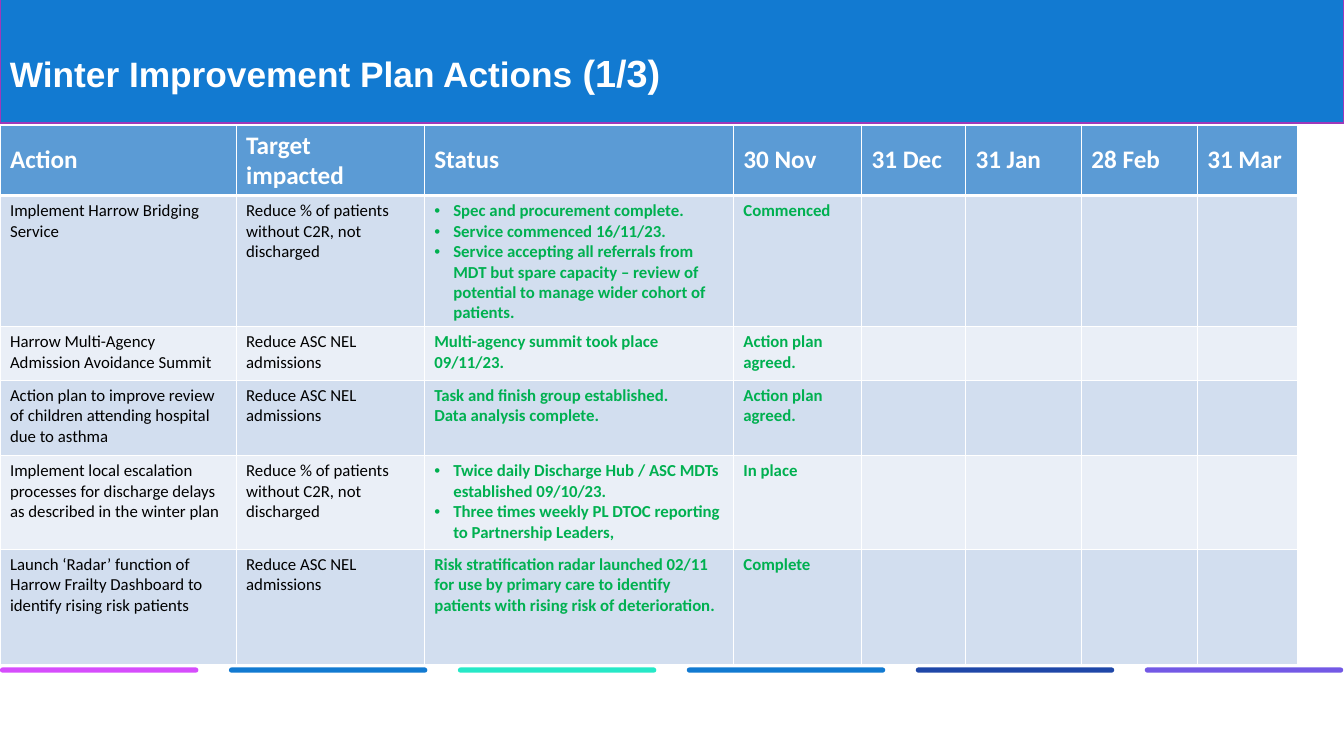
from dataclasses import dataclass

from lxml import etree
from pptx import Presentation
from pptx.dml.color import RGBColor
from pptx.enum.shapes import MSO_SHAPE
from pptx.enum.text import MSO_ANCHOR
from pptx.oxml.ns import qn
from pptx.slide import Slide
from pptx.table import _Cell
from pptx.util import Cm, Pt

RECTANGLE = MSO_SHAPE.RECTANGLE
ROUNDED_RECTANGLE = MSO_SHAPE.ROUNDED_RECTANGLE
MIDDLE = MSO_ANCHOR.MIDDLE


@dataclass(frozen=True)
class Theme:
    title_font: str = "Arial"
    table_font: str = "Calibri"
    title_size: float = 25.2
    page_size: float = 27
    header_size: float = 18
    body_size: float = 12
    white: str = "FFFFFF"
    black: str = "000000"
    progress: str = "00B050"
    band: str = "127AD1"
    band_line: str = "9E39BA"
    header_fill: str = "5B9BD5"
    row_fills: tuple[str, str] = ("D2DEEF", "EAEFF7")
    bars: tuple[str, ...] = ("D64DFC", "127AD1", "26E8C7", "127AD1", "1F47A8", "7359E5")


@dataclass(frozen=True)
class Action:
    name: str
    target: str
    status: str
    november: str
    height: float
    bulleted: bool = False


THEME = Theme()
HEADERS = ("Action", "Target impacted", "Status", "30 Nov", "31 Dec", "31 Jan", "28 Feb", "31 Mar")
COLUMN_WIDTHS = (5.95, 4.74, 7.79, 3.23, 2.62, 2.92, 2.92, 2.54)
HEADER_HEIGHT = 1.75
STATUS_COLUMN = 2
DISCHARGE = "Reduce % of patients without C2R, not discharged"
ADMISSIONS = "Reduce ASC NEL admissions"
ACTIONS = (
    Action("Implement Harrow Bridging Service", DISCHARGE,
           "Spec and procurement complete.\nService commenced 16/11/23.\n"
           "Service accepting all referrals from MDT but spare capacity – review of "
           "potential to manage wider cohort of patients.",
           "Commenced", 3.28, True),
    Action("Harrow Multi-Agency Admission Avoidance Summit", ADMISSIONS,
           "Multi-agency summit took place 09/11/23.", "Action plan agreed.", 1.35),
    Action("Action plan to improve review of children attending hospital due to asthma", ADMISSIONS,
           "Task and finish group established.\nData analysis complete.",
           "Action plan agreed.", 1.9),
    Action("Implement local escalation processes for discharge delays as described in the winter plan",
           DISCHARGE,
           "Twice daily Discharge Hub / ASC MDTs established 09/10/23.\n"
           "Three times weekly PL DTOC reporting to Partnership Leaders,",
           "In place", 2.36, True),
    Action("Launch ‘Radar’ function of Harrow Frailty Dashboard to identify rising risk patients",
           ADMISSIONS,
           "Risk stratification radar launched 02/11 for use by primary care to identify "
           "patients with rising risk of deterioration.",
           "Complete", 2.9),
)


def color(value: str) -> RGBColor:
    return RGBColor.from_string(value)


def add_band(slide: Slide) -> None:
    band = slide.shapes.add_shape(RECTANGLE, Cm(0), Cm(-0.08), Cm(33.87), Cm(3.18))
    band.shadow.inherit = False
    band.fill.solid()
    band.fill.fore_color.rgb = color(THEME.band)
    band.line.color.rgb = color(THEME.band_line)
    band.line.width = Pt(1)


def add_footer_bars(slide: Slide) -> None:
    for index, fill in enumerate(THEME.bars):
        bar = slide.shapes.add_shape(ROUNDED_RECTANGLE, Cm(5.77 * index), Cm(16.82), Cm(5), Cm(0.13))
        bar.shadow.inherit = False
        bar.adjustments[0] = 0.5
        bar.fill.solid()
        bar.fill.fore_color.rgb = color(fill)
        bar.line.fill.background()


def add_title(slide: Slide) -> None:
    title = slide.shapes.add_textbox(Cm(0), Cm(0.05), Cm(29.21), Cm(3.68))
    title.text_frame.word_wrap = True
    title.text_frame.vertical_anchor = MIDDLE
    paragraph = title.text_frame.paragraphs[0]
    paragraph.line_spacing = 0.9
    for text, size in (("Winter Improvement Plan Actions ", THEME.title_size),
                       ("(1/3)", THEME.page_size)):
        run = paragraph.add_run()
        run.text = text
        run.font.name = THEME.title_font
        run.font.size = Pt(size)
        run.font.bold = True
        run.font.color.rgb = color(THEME.white)


def set_borders(cell: _Cell, row: int) -> None:
    """Draw white borders, with a heavy rule between the header and the first action."""
    properties = cell._tc.get_or_add_tcPr()
    heavy_side = {0: "lnB", 1: "lnT"}.get(row)
    for side in ("lnL", "lnR", "lnT", "lnB"):
        width = Pt(3 if side == heavy_side else 1)
        line = etree.SubElement(properties, qn(f"a:{side}"), w=str(width))
        fill = etree.SubElement(line, qn("a:solidFill"))
        etree.SubElement(fill, qn("a:srgbClr"), val=THEME.white)


def fill_cell(cell: _Cell, text: str, row: int, column: int, bulleted: bool) -> None:
    is_header = row == 0
    is_progress = column >= STATUS_COLUMN
    set_borders(cell, row)
    cell.fill.solid()
    cell.fill.fore_color.rgb = color(THEME.header_fill if is_header else THEME.row_fills[(row - 1) % 2])
    if is_header:
        cell.vertical_anchor = MIDDLE
    cell.text_frame.text = text
    body_color = THEME.progress if is_progress else THEME.black
    for paragraph in cell.text_frame.paragraphs:
        if bulleted:
            properties = paragraph._p.get_or_add_pPr()
            properties.set("marL", str(Cm(0.48)))
            properties.set("indent", str(Cm(-0.48)))
            etree.SubElement(properties, qn("a:buFont"), typeface="Arial")
            etree.SubElement(properties, qn("a:buChar"), char="•")
        for run in paragraph.runs:
            run.font.name = THEME.table_font
            run.font.size = Pt(THEME.header_size if is_header else THEME.body_size)
            run.font.bold = is_header or is_progress
            run.font.color.rgb = color(THEME.white if is_header else body_color)


def add_action_table(slide: Slide) -> None:
    heights = (HEADER_HEIGHT, *(action.height for action in ACTIONS))
    table = slide.shapes.add_table(len(heights), len(HEADERS), Cm(0), Cm(3.15),
                                   Cm(sum(COLUMN_WIDTHS)), Cm(sum(heights))).table
    for column, width in zip(table.columns, COLUMN_WIDTHS):
        column.width = Cm(width)
    for row, height in zip(table.rows, heights):
        row.height = Cm(height)
    for column, header in enumerate(HEADERS):
        fill_cell(table.cell(0, column), header, 0, column, False)
    for row, action in enumerate(ACTIONS, start=1):
        texts = (action.name, action.target, action.status, action.november)
        for column in range(len(HEADERS)):
            text = texts[column] if column < len(texts) else ""
            bulleted = action.bulleted and column == STATUS_COLUMN
            fill_cell(table.cell(row, column), text, row, column, bulleted)


def main() -> None:
    presentation = Presentation()
    presentation.slide_width = Cm(33.87)
    presentation.slide_height = Cm(19.05)
    slide = presentation.slides.add_slide(presentation.slide_layouts[6])
    add_band(slide)
    add_footer_bars(slide)
    add_title(slide)
    add_action_table(slide)
    presentation.save("out.pptx")


if __name__ == "__main__":
    main()
